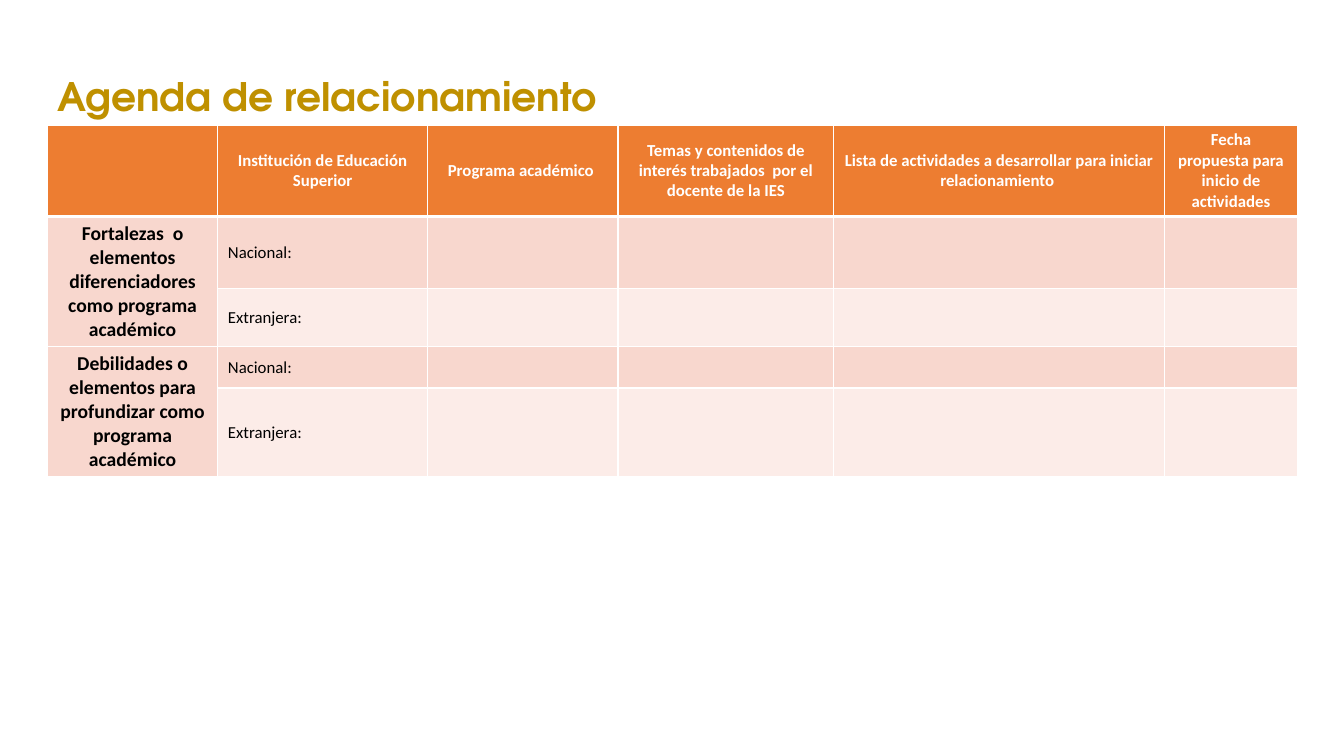
from dataclasses import dataclass

from lxml import etree
from pptx import Presentation
from pptx.dml.color import RGBColor
from pptx.enum.text import MSO_ANCHOR, PP_ALIGN
from pptx.oxml.ns import qn
from pptx.util import Inches, Pt

SLIDE_WIDTH, SLIDE_HEIGHT = Inches(13.33), Inches(7.5)
CENTER, LEFT = PP_ALIGN.CENTER, PP_ALIGN.LEFT
MIDDLE = MSO_ANCHOR.MIDDLE

TITLE_FONT, BODY_FONT = "TeX Gyre Adventor", "Calibri"
WHITE, BLACK, GOLD = "FFFFFF", "000000", "BF9000"
ORANGE, PEACH, PALE = "ED7D31", "F8D7CE", "FCECE8"

# Percent of the slide's width (columns) and height (rows)
LEFT_MARGIN = 3.53
TABLE_TOP = 16.53
COLUMN_SHARES = [12.68, 15.6, 14.18, 16.05, 24.61, 9.9]
ROW_SHARES = [12.13, 9.47, 7.73, 5.47, 11.73]

HEADINGS = [
    "",
    "Institución de Educación Superior",
    "Programa académico ",
    "Temas y contenidos de interés trabajados  por el docente de la IES",
    "Lista de actividades a desarrollar para iniciar relacionamiento ",
    "Fecha propuesta para inicio de actividades",
]


@dataclass(frozen=True)
class Origin:
    label: str
    fill: str


@dataclass(frozen=True)
class Aspect:
    label: str
    first_row: int


ORIGINS = [Origin("Nacional:", PEACH), Origin("Extranjera:", PALE)]
ASPECTS = [
    Aspect("Fortalezas  o elementos diferenciadores\ncomo programa académico", 1),
    Aspect("Debilidades o elementos para profundizar como programa académico", 3),
]


def across(percent: float) -> int:
    return round(SLIDE_WIDTH * percent / 100)


def down(percent: float) -> int:
    return round(SLIDE_HEIGHT * percent / 100)


def color(code: str) -> RGBColor:
    return RGBColor.from_string(code)


def write(frame, text: str, *, size: float = 12, font: str = BODY_FONT, ink: str = BLACK,
          bold: bool = False, align=LEFT, line_spacing: float = 1.0) -> None:
    frame.word_wrap = True
    frame.text = text
    for paragraph in frame.paragraphs:
        paragraph.alignment = align
        paragraph.line_spacing = line_spacing
        paragraph.font.size = Pt(size)
        paragraph.font.name = font
        paragraph.font.bold = bold
        paragraph.font.color.rgb = color(ink)


def add_border(cell, side: str, width: float) -> None:
    line = etree.SubElement(cell._tc.get_or_add_tcPr(), qn(f"a:ln{side}"), w=str(Pt(width)))
    fill = etree.SubElement(line, qn("a:solidFill"))
    etree.SubElement(fill, qn("a:srgbClr"), val=WHITE)


def style_cell(cell, fill: str, top: float, bottom: float) -> None:
    # Borders come before the fill in the cell properties
    for side, width in (("L", 1), ("R", 1), ("T", top), ("B", bottom)):
        add_border(cell, side, width)
    cell.fill.solid()
    cell.fill.fore_color.rgb = color(fill)
    cell.vertical_anchor = MIDDLE


def add_title(slide) -> None:
    title = slide.shapes.add_textbox(across(LEFT_MARGIN), down(5.73), across(65.27), down(10.8))
    title.text_frame.vertical_anchor = MIDDLE
    write(title.text_frame, "Agenda de relacionamiento", size=28, font=TITLE_FONT,
          ink=GOLD, bold=True, line_spacing=1.5)


def add_agenda(slide) -> None:
    agenda = slide.shapes.add_table(
        len(ROW_SHARES), len(COLUMN_SHARES), across(LEFT_MARGIN), down(TABLE_TOP),
        across(sum(COLUMN_SHARES)), down(sum(ROW_SHARES))).table
    for column, share in zip(agenda.columns, COLUMN_SHARES):
        column.width = across(share)
    for row, share in zip(agenda.rows, ROW_SHARES):
        row.height = down(share)

    # Heading row
    for index, heading in enumerate(HEADINGS):
        cell = agenda.cell(0, index)
        style_cell(cell, ORANGE, top=1, bottom=3)
        write(cell.text_frame, heading, ink=WHITE, bold=True, align=CENTER)

    # Each aspect spans one row per origin
    for aspect in ASPECTS:
        for row, origin in enumerate(ORIGINS, aspect.first_row):
            for index in range(len(COLUMN_SHARES)):
                fill = origin.fill if index else PEACH
                style_cell(agenda.cell(row, index), fill, top=3 if row == 1 else 1, bottom=1)
            write(agenda.cell(row, 1).text_frame, origin.label)
        aspect_cell = agenda.cell(aspect.first_row, 0)
        aspect_cell.merge(agenda.cell(aspect.first_row + len(ORIGINS) - 1, 0))
        write(aspect_cell.text_frame, aspect.label, size=14, bold=True, align=CENTER)


def main() -> None:
    presentation = Presentation()
    presentation.slide_width, presentation.slide_height = SLIDE_WIDTH, SLIDE_HEIGHT
    slide = presentation.slides.add_slide(presentation.slide_layouts[6])
    add_title(slide)
    add_agenda(slide)
    presentation.save("out.pptx")


if __name__ == "__main__":
    main()
